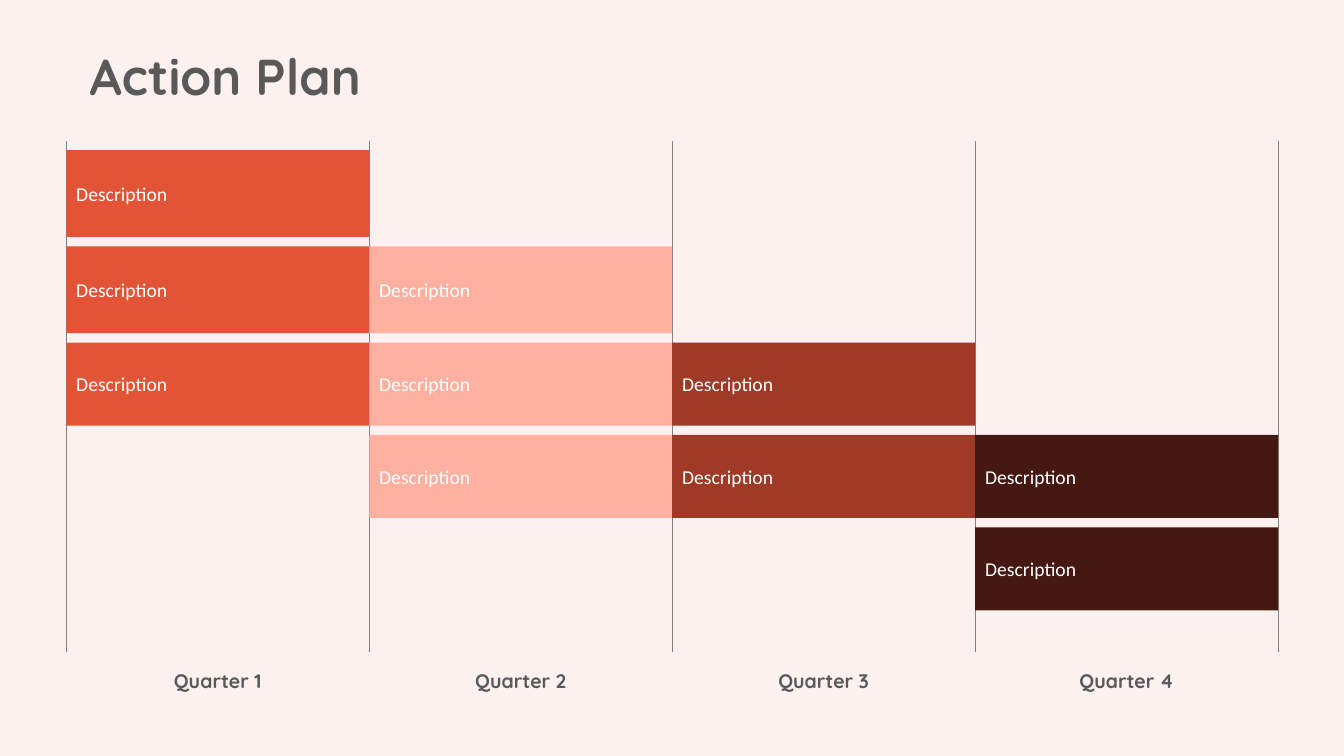
from dataclasses import dataclass

from lxml import etree
from pptx import Presentation
from pptx.dml.color import RGBColor
from pptx.enum.shapes import MSO_CONNECTOR, MSO_SHAPE
from pptx.enum.text import MSO_ANCHOR, MSO_AUTO_SIZE, PP_ALIGN
from pptx.oxml.ns import qn
from pptx.util import Pt

STRAIGHT = MSO_CONNECTOR.STRAIGHT
RECTANGLE = MSO_SHAPE.RECTANGLE
TOP, MIDDLE = MSO_ANCHOR.TOP, MSO_ANCHOR.MIDDLE
LEFT, CENTER = PP_ALIGN.LEFT, PP_ALIGN.CENTER
NO_AUTOFIT = MSO_AUTO_SIZE.NONE


@dataclass(frozen=True)
class Theme:
    background: str = "FDF1EF"
    heading: str = "595959"
    grid: str = "808080"
    bar_text: str = "FFFFFF"
    quarters: tuple = ("E35336", "FFB0A1", "9E3A26", "451911")
    heading_font: str = "Quicksand"
    body_font: str = "Calibri"
    title_size: int = 36
    text_size: int = 14


theme = Theme()


def color(value):
    return RGBColor.from_string(value)


def write(shape, text, font_name, size, text_color, bold, alignment, anchor):
    """Put one formatted line of text into a shape."""
    frame = shape.text_frame
    frame.text = text
    frame.word_wrap = True
    frame.auto_size = NO_AUTOFIT
    frame.vertical_anchor = anchor
    paragraph = frame.paragraphs[0]
    paragraph.alignment = alignment
    font = paragraph.runs[0].font
    font.name = font_name
    font.size = Pt(size)
    font.bold = bold
    font.color.rgb = color(text_color)


presentation = Presentation()
presentation.slide_width = Pt(960)
presentation.slide_height = Pt(540)
slide = presentation.slides.add_slide(presentation.slide_layouts[5])
slide.background.fill.solid()
slide.background.fill.fore_color.rgb = color(theme.background)

title = slide.shapes.title
title.left, title.top, title.width, title.height = Pt(56.9), Pt(28.8), Pt(669.6), Pt(51.1)
write(title, "Action Plan", theme.heading_font, theme.title_size,
      theme.heading, True, LEFT, TOP)

# Quarter columns
GRID_LEFT, GRID_TOP, GRID_BOTTOM = 47.4, 100.8, 465.8
COLUMN_WIDTH = 216.4
LABEL_TOP, LABEL_WIDTH, LABEL_HEIGHT = 474.5, 100, 24.5
column_lefts = [GRID_LEFT + COLUMN_WIDTH * index for index in range(5)]

for x in column_lefts:
    divider = slide.shapes.add_connector(
        STRAIGHT, Pt(x), Pt(GRID_BOTTOM), Pt(x), Pt(GRID_TOP))
    divider.line.color.rgb = color(theme.grid)
    divider.line.width = Pt(0.5)
    etree.SubElement(divider._element.spPr, qn("a:effectLst"))

for number, x in enumerate(column_lefts[:-1], start=1):
    label_left = x + (COLUMN_WIDTH - LABEL_WIDTH) / 2
    label = slide.shapes.add_textbox(
        Pt(label_left), Pt(LABEL_TOP), Pt(LABEL_WIDTH), Pt(LABEL_HEIGHT))
    write(label, f"Quarter {number}", theme.heading_font, theme.text_size,
          theme.heading, True, CENTER, TOP)

# Bars: the quarters in which each row is active
ROW_GAP = 6.7
row_heights = [62, 62, 59.3, 59.3, 59.3]
active_quarters = [[0], [0, 1], [0, 1, 2], [1, 2, 3], [3]]

row_top = 107.3
for height, quarters in zip(row_heights, active_quarters):
    for quarter in quarters:
        bar = slide.shapes.add_shape(
            RECTANGLE, Pt(column_lefts[quarter]), Pt(row_top),
            Pt(COLUMN_WIDTH), Pt(height))
        bar.shadow.inherit = False
        bar.fill.solid()
        bar.fill.fore_color.rgb = color(theme.quarters[quarter])
        bar.line.fill.background()
        write(bar, "Description", theme.body_font, theme.text_size,
              theme.bar_text, False, LEFT, MIDDLE)
    row_top += height + ROW_GAP

presentation.save("out.pptx")
